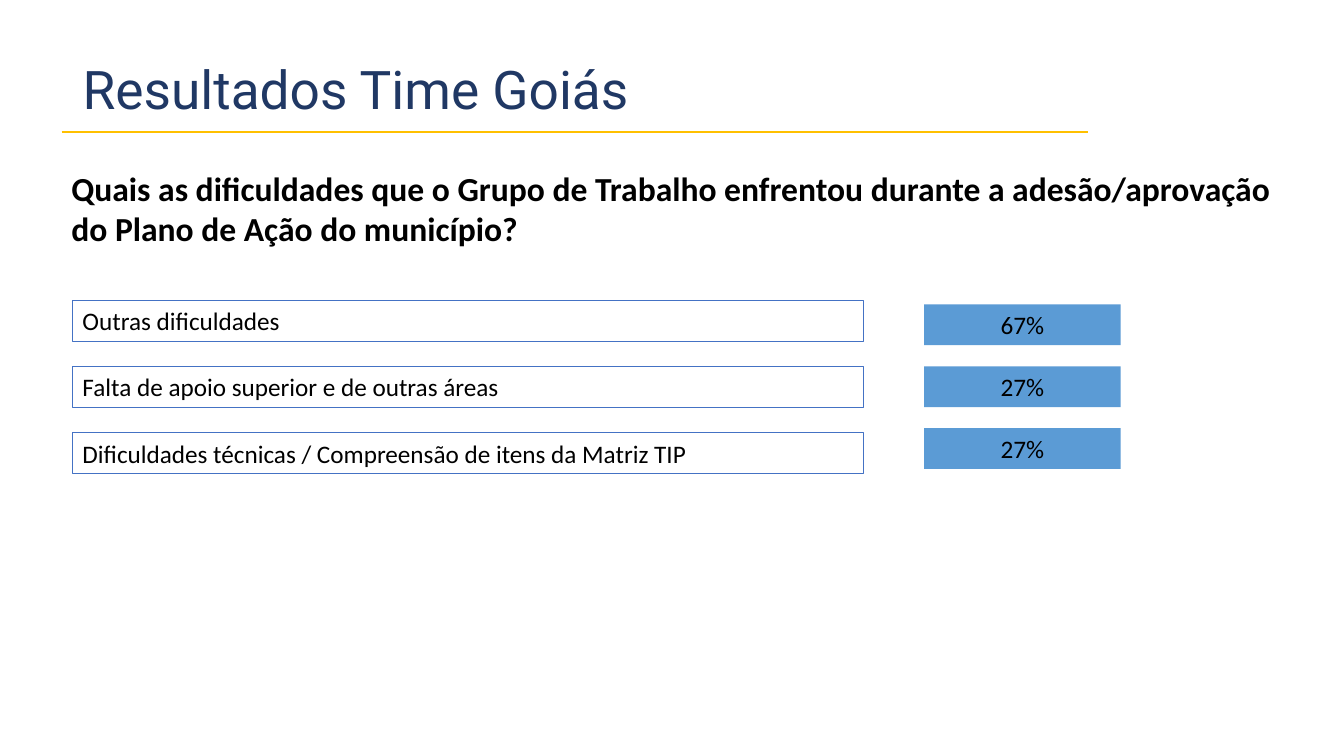
import pptx
import pptx.dml.color
import pptx.enum.shapes
import pptx.enum.text
import pptx.oxml
import pptx.util

Cm = pptx.util.Cm
Pt = pptx.util.Pt
ALIGN = pptx.enum.text.PP_ALIGN
ANCHOR = pptx.enum.text.MSO_ANCHOR

RESULTS = [
    ("Outras dificuldades", "67%"),
    ("Falta de apoio superior e de outras áreas", "27%"),
    ("Dificuldades técnicas / Compreensão de itens da Matriz TIP", "27%"),
]
ROW_HEIGHT = 1.03
LABEL = {"left": 1.83, "top": 7.57, "pitch": 1.67, "width": 19.94}
VALUE = {"left": 23.29, "top": 7.67, "pitch": 1.56, "width": 4.95}


def rgb(color):
    return pptx.dml.color.RGBColor.from_string(color)


def apply(obj, values):
    for name, value in values.items():
        setattr(obj, name, value)


def place(sp, *box):
    apply(sp, dict(zip(("left", "top", "width", "height"), map(Cm, box))))


def write(sp, text, size, color="000000", font="Calibri", bold=False,
          align=ALIGN.LEFT, anchor=ANCHOR.TOP, spacing=1.0):
    tf = sp.text_frame
    apply(tf, {"word_wrap": True, "vertical_anchor": anchor})
    p = tf.paragraphs[0]
    apply(p, {"alignment": align, "line_spacing": spacing})
    r = p.add_run()
    r.text = text
    apply(r.font, {"name": font, "size": Pt(size), "bold": bold})
    r.font.color.rgb = rgb(color)


def add_title(s, text):
    sp = s.shapes.title
    place(sp, 1.83, 1.4, 23.09, 1.83)
    write(sp, text, 38, "203864", "Roboto", anchor=ANCHOR.MIDDLE, spacing=0.9)
    sp.text_frame.auto_size = pptx.enum.text.MSO_AUTO_SIZE.NONE


def add_rule(s, x1, x2, y, color):
    line = s.shapes.add_connector(
        pptx.enum.shapes.MSO_CONNECTOR.STRAIGHT, Cm(x1), Cm(y), Cm(x2), Cm(y))
    line.line.color.rgb = rgb(color)
    line.line.width = Pt(1)
    line._element.spPr.append(pptx.oxml.parse_xml(
        '<a:effectLst xmlns:a="http://schemas.openxmlformats.org/drawingml/2006/main"/>'))


def add_question(s, text):
    sp = s.shapes.add_textbox(Cm(1.55), Cm(4.11), Cm(31.5), Cm(2.31))
    write(sp, text, 24, bold=True)


def add_box(s, column, row, text, align, fill=None, outline=None):
    top = column["top"] + row * column["pitch"]
    sp = s.shapes.add_shape(
        pptx.enum.shapes.MSO_SHAPE.RECTANGLE,
        Cm(column["left"]), Cm(top), Cm(column["width"]), Cm(ROW_HEIGHT))
    sp.shadow.inherit = False
    if fill:
        sp.fill.solid()
        sp.fill.fore_color.rgb = rgb(fill)
    else:
        sp.fill.background()
    if outline:
        sp.line.color.rgb = rgb(outline)
        sp.line.width = Pt(0.75)
    else:
        sp.line.fill.background()
    write(sp, text, 18, align=align)


def main():
    prs = pptx.Presentation()
    apply(prs, {"slide_width": Cm(33.87), "slide_height": Cm(19.05)})
    s = prs.slides.add_slide(prs.slide_layouts.get_by_name("Title Only"))
    add_title(s, "Resultados Time Goiás")
    add_rule(s, 1.55, 27.41, 3.33, "FFC000")
    add_question(s, "Quais as dificuldades que o Grupo de Trabalho enfrentou "
                    "durante a adesão/aprovação do Plano de Ação do município?")
    for row, (label, value) in enumerate(RESULTS):
        add_box(s, LABEL, row, label, ALIGN.LEFT, outline="4472C4")
        add_box(s, VALUE, row, value, ALIGN.CENTER, fill="5B9BD5")
    prs.save("out.pptx")


if __name__ == "__main__":
    main()
